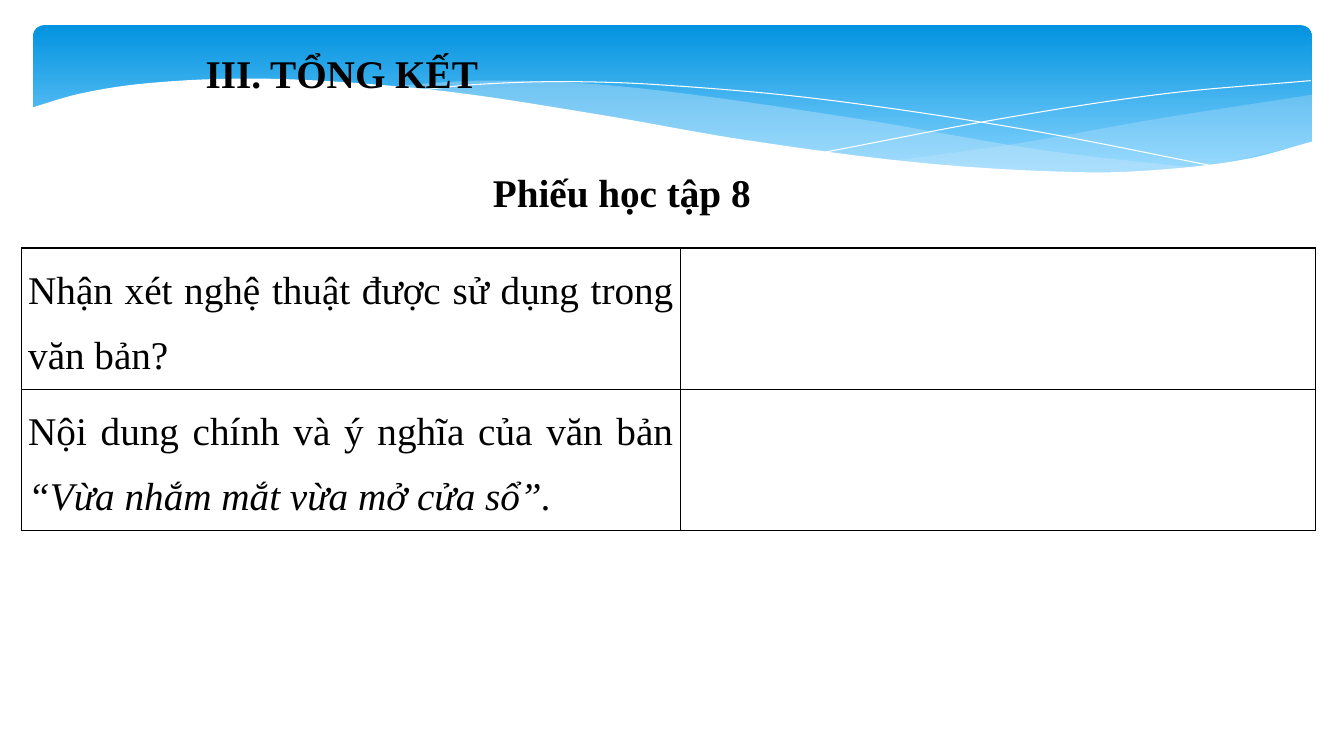
import pptx
import pptx.util
import pptx.dml.color
import pptx.enum.shapes
import pptx.enum.text
import pptx.oxml
from pptx.oxml import ns

Inches, Pt = pptx.util.Inches, pptx.util.Pt
JUSTIFIED = {"alignment": pptx.enum.text.PP_ALIGN.JUSTIFY, "line_spacing": 1.5}
BLACK, WHITE, PALE_BLUE = "000000", "FFFFFF", "C6E7FC"
STEPS = 10  # straight pieces between two knots of a curve


def colour(code):
    return pptx.dml.color.RGBColor.from_string(code)


def write(frame, spans, para_format):
    para = frame.paragraphs[0]
    for name, value in para_format.items():
        setattr(para, name, value)
    for text, extra in spans:
        span = para.add_run()
        span.text = text
        span.font.color.rgb = colour(BLACK)
        for name, value in {"name": "Times New Roman", "size": Pt(28), **extra}.items():
            setattr(span.font, name, value)


deck = pptx.Presentation()
deck.slide_width, deck.slide_height = Inches(13.33), Inches(7.5)
page = deck.slides.add_slide(deck.slide_layouts[6])

# Blue gradient banner
banner = page.shapes.add_shape(
    pptx.enum.shapes.MSO_SHAPE.ROUNDED_RECTANGLE,
    Inches(0.33), Inches(0.25), Inches(12.68), Inches(1.56))
banner.adjustments[0] = 0.07
banner.shadow.inherit = False
banner.line.fill.background()
banner.fill.gradient()
banner.fill.gradient_angle = 270
for stop, place, code in zip(banner.fill.gradient_stops, (0, 0.9), ("0293E0", "83D3FE")):
    stop.position = place
    stop.color.rgb = colour(code)

# Knots that each curve passes through, from left to right
knots = {
    "right top": [(8.82, 1.6), (10.05, 1.43), (11.47, 1.18), (13.01, 0.94)],
    "right bottom": [(8.82, 1.6), (9.93, 1.69), (10.85, 1.72), (11.86, 1.66), (13.01, 1.42)],
    "middle top": [(3.82, 0.86), (4.82, 0.8), (6.19, 0.86), (8.39, 1.16),
                   (10.34, 1.49), (11.9, 1.67)],
    "middle bottom": [(3.82, 0.86), (5.99, 1.16), (8.02, 1.5), (9.63, 1.68),
                      (10.76, 1.73), (11.9, 1.67)],
    "falling": [(4.12, 0.9), (4.7, 0.84), (5.55, 0.81), (6.52, 0.84),
                (8.11, 0.98), (10.14, 1.28), (12.1, 1.66)],
    "rising": [(8.18, 1.51), (9.97, 1.17), (11.55, 0.93), (13, 0.8)],
    "page edge": [(0.31, 1.07), (0.79, 0.93), (1.42, 0.83), (2.35, 0.78), (3.33, 0.81),
                  (4.53, 0.92), (5.96, 1.14), (7.4, 1.39), (9.18, 1.62), (10.78, 1.71),
                  (11.67, 1.67), (12.4, 1.57), (13.03, 1.4)],
}

# Smooth every curve with cubic Hermite pieces; a slope joins the two neighbours
curves = {}
for name, spots in knots.items():
    before, after = spots[:1] + spots[:-1], spots[1:] + spots[-1:]
    slopes = [(y2 - y1) / (x2 - x1) for (x1, y1), (x2, y2) in zip(before, after)]
    curve = [spots[0]]
    for (x1, y1), (x2, y2), slope1, slope2 in zip(spots, spots[1:], slopes, slopes[1:]):
        width = x2 - x1
        for step in range(1, STEPS + 1):
            t = step / STEPS
            blend = t * t * (3 - 2 * t)
            bend = width * t * (1 - t) * (slope1 * (1 - t) - slope2 * t)
            curve.append((x1 + width * t, y1 + (y2 - y1) * blend + bend))
    curves[name] = curve

# Waves, from back to front: outline, fill colour, opacity in percent
waves = [
    (curves["right top"] + curves["right bottom"][::-1], PALE_BLUE, 29),
    (curves["middle top"] + curves["middle bottom"][::-1], PALE_BLUE, 40),
    (curves["falling"], None, 100),
    (curves["rising"], None, 100),
    (curves["page edge"] + [(13.03, 2.24), (0.31, 2.24)], WHITE, 100),
]
for points, fill_code, opacity in waves:
    corners = [(Inches(x), Inches(y)) for x, y in points]
    outline = page.shapes.build_freeform(*corners[0])
    outline.add_line_segments(corners[1:], close=fill_code is not None)
    wave = outline.convert_to_shape()
    wave.shadow.inherit = False
    if fill_code is None:
        wave.fill.background()
        wave.line.color.rgb = colour(WHITE)
        wave.line.width = Pt(0)
    else:
        wave.line.fill.background()
        wave.fill.solid()
        wave.fill.fore_color.rgb = colour(fill_code)
        tint = wave.element.spPr.find(ns.qn("a:solidFill"))[0]
        tint.append(pptx.oxml.parse_xml(
            f'<a:alpha {ns.nsdecls("a")} val="{opacity * 1000}"/>'))

# Headings
headings = [
    ("III. TỔNG KẾT", (1.94, 0.44, 5.51, 0.57), True, {}),
    ("Phiếu học tập 8", (4.79, 1.39, 2.79, 0.73), False, JUSTIFIED),
]
for text, area, wrap, para_format in headings:
    box = page.shapes.add_textbox(*map(Inches, area))
    box.text_frame.word_wrap = wrap
    box.text_frame.auto_size = pptx.enum.text.MSO_AUTO_SIZE.SHAPE_TO_FIT_TEXT
    write(box.text_frame, [(text, {"bold": True})], para_format)

# Worksheet table: questions on the left, room for answers on the right
questions = [
    [("Nhận xét nghệ thuật được sử dụng trong văn bản?", {})],
    [("Nội dung chính và ý nghĩa của văn bản ", {}),
     ("“Vừa nhắm mắt vừa mở cửa sổ”.", {"italic": True})],
]
column_widths, row_height = (6.54, 6.3), 1.4
table = page.shapes.add_table(
    len(questions), len(column_widths), Inches(0.21), Inches(2.46),
    Inches(sum(column_widths)), Inches(row_height * len(questions))).table
table.first_row = table.horz_banding = False
for column, width in zip(table.columns, column_widths):
    column.width = Inches(width)
for row, question in zip(table.rows, questions):
    row.height = Inches(row_height)
    write(row.cells[0].text_frame, question, JUSTIFIED)
for cell in table.iter_cells():
    cell.margin_left = cell.margin_right = Inches(0.07)
    cell.margin_top = cell.margin_bottom = 0
    properties = cell._tc.get_or_add_tcPr()
    for side in ("lnL", "lnR", "lnT", "lnB"):
        properties.append(pptx.oxml.parse_xml(
            f'<a:{side} {ns.nsdecls("a")} w="{Pt(1)}"><a:solidFill>'
            f'<a:srgbClr val="{BLACK}"/></a:solidFill></a:{side}>'))
    cell.fill.background()

deck.save("out.pptx")
